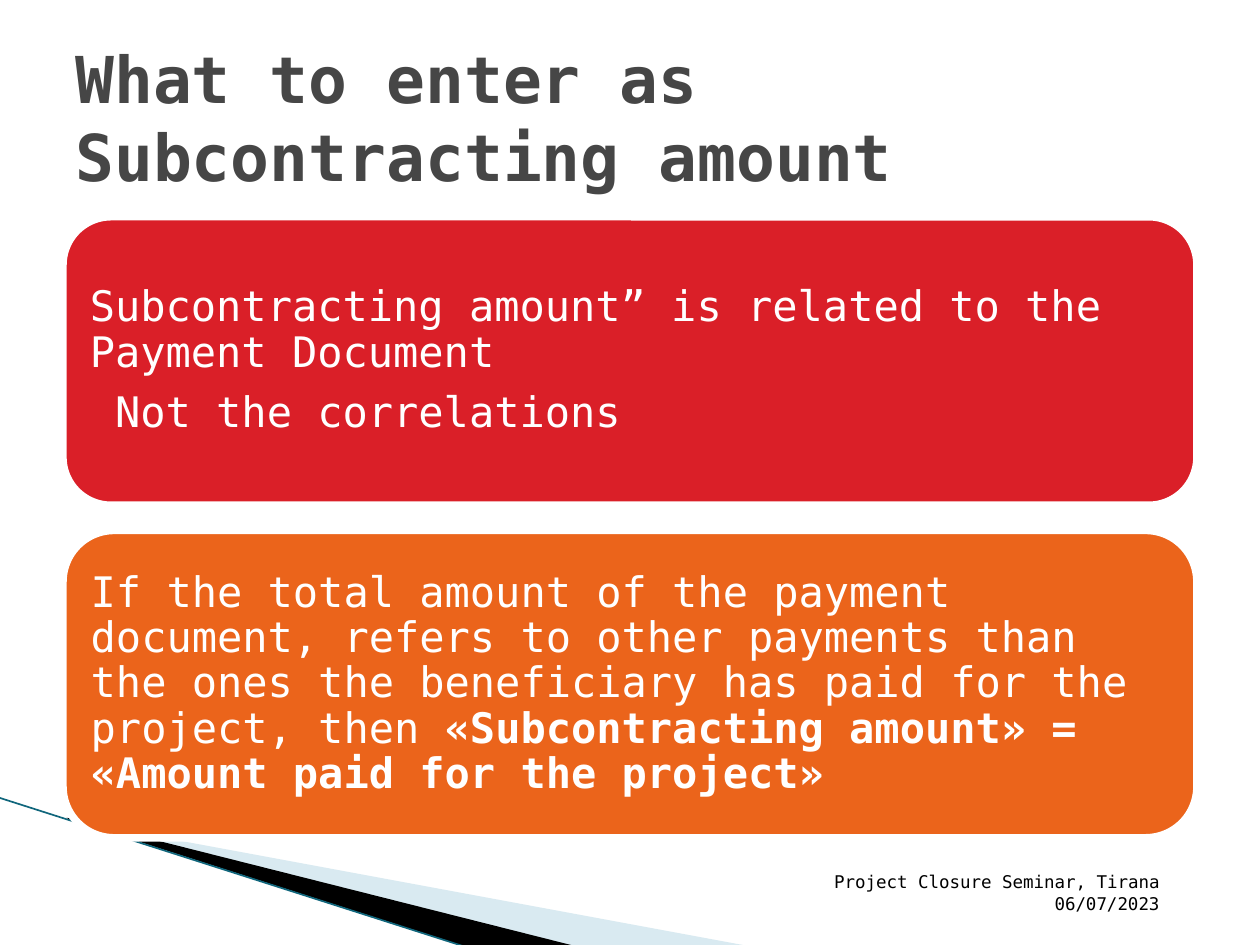
"""Build the slide that explains what to enter as the subcontracting amount."""
from lxml import etree
from pptx import Presentation
from pptx import util as u
from pptx.dml.color import RGBColor
from pptx.enum import shapes, text
from pptx.oxml.ns import qn

COLOURS = {
    "white": "FFFFFF", "black": "000000", "title": "464646", "red": "DA1F28",
    "orange": "EB641B", "pale": "A0CBDC", "teal": "10667C",
}
FONT = "DejaVu Sans Mono"


def colour(name):
    return RGBColor.from_string(COLOURS[name])


def add_text(place, paragraphs, inset, anchor, style, layout):
    box = page.shapes.add_textbox(*[u.Inches(value) for value in place])
    frame = box.text_frame
    frame.word_wrap = True
    frame.vertical_anchor = anchor
    for side in ("left", "right"):
        setattr(frame, f"margin_{side}", u.Inches(0.1))
    for side in ("top", "bottom"):
        setattr(frame, f"margin_{side}", u.Inches(inset))
    for index, spans in enumerate(paragraphs):
        para = frame.add_paragraph() if index else frame.paragraphs[0]
        for key, value in layout.items():
            setattr(para, key, value)
        for words, bold in spans:
            span = para.add_run()
            span.text = words
            span.font.color.rgb = colour(style["colour"])
            for key, value in {"name": FONT, "size": u.Pt(style["size"]), "bold": bold}.items():
                setattr(span.font, key, value)


deck = Presentation()
deck.slide_width, deck.slide_height = u.Inches(10), u.Inches(7.5)
page = deck.slides.add_slide(deck.slide_layouts[6])

wedges = [
    ("pale", 40, [(0.55, 6.51), (5.95, 7.51), (4.56, 7.51), (0.55, 6.5)]),
    ("black", 100, [(0.53, 6.49), (4.57, 7.51), (3.72, 7.52), (0.54, 6.5)]),
]
for name, opacity, points in wedges:
    corners = [(u.Inches(x), u.Inches(y)) for x, y in points]
    builder = page.shapes.build_freeform(*corners[0])
    builder.add_line_segments(corners[1:], close=True)
    wedge = builder.convert_to_shape()
    wedge.shadow.inherit = False
    wedge.fill.solid()
    wedge.fill.fore_color.rgb = colour(name)
    wedge.line.fill.background()
    if opacity < 100:
        tint = wedge.fill._xPr.find(qn("a:solidFill"))[0]
        etree.SubElement(tint, qn("a:alpha")).set("val", str(opacity * 1000))

edge = page.shapes.add_connector(
    shapes.MSO_CONNECTOR.STRAIGHT, *[u.Inches(value) for value in (-0.01, 6.33, 3.71, 7.52)])
edge.line.color.rgb = colour("teal")
edge.line.width = u.Pt(0.95)
etree.SubElement(edge._element.spPr, qn("a:effectLst"))

cards = [
    ("red", 1.72, 2.29, [
        [("Subcontracting amount” is related to the Payment Document", False)],
        [(" Not the correlations", False)],
    ]),
    ("orange", 4.21, 2.44, [[
        ("If the total amount of the payment document, refers to other payments than "
         "the ones the beneficiary has paid for the project, then ", False),
        ("«Subcontracting amount» = «Amount paid for the project»", True),
    ]]),
]
for name, top, height, paragraphs in cards:
    card = page.shapes.add_shape(
        shapes.MSO_SHAPE.ROUNDED_RECTANGLE, u.Inches(0.5), u.Inches(top), u.Inches(9), u.Inches(height))
    card.shadow.inherit = False
    card.fill.solid()
    card.fill.fore_color.rgb = colour(name)
    card.line.color.rgb = colour("white")
    card.line.width = u.Pt(4.33)
    pad = 0.05 * height
    add_text((0.5 + pad, top + pad, 9 - 2 * pad, height - 2 * pad), paragraphs, 0.1,
             text.MSO_ANCHOR.MIDDLE, {"colour": "white", "size": 24},
             {"line_spacing": 0.9, "space_after": u.Pt(8.4)})

add_text((6.02, 6.9, 3.28, 0.4), [[("Project Closure Seminar, Tirana 06/07/2023", False)]], 0.05,
         text.MSO_ANCHOR.BOTTOM, {"colour": "black", "size": 10}, {"alignment": text.PP_ALIGN.RIGHT})
add_text((0.5, 0.3, 9, 1.25), [[("What to enter as Subcontracting amount", True)]], 0.05,
         text.MSO_ANCHOR.MIDDLE, {"colour": "title", "size": 36.9}, {})

deck.save("out.pptx")
